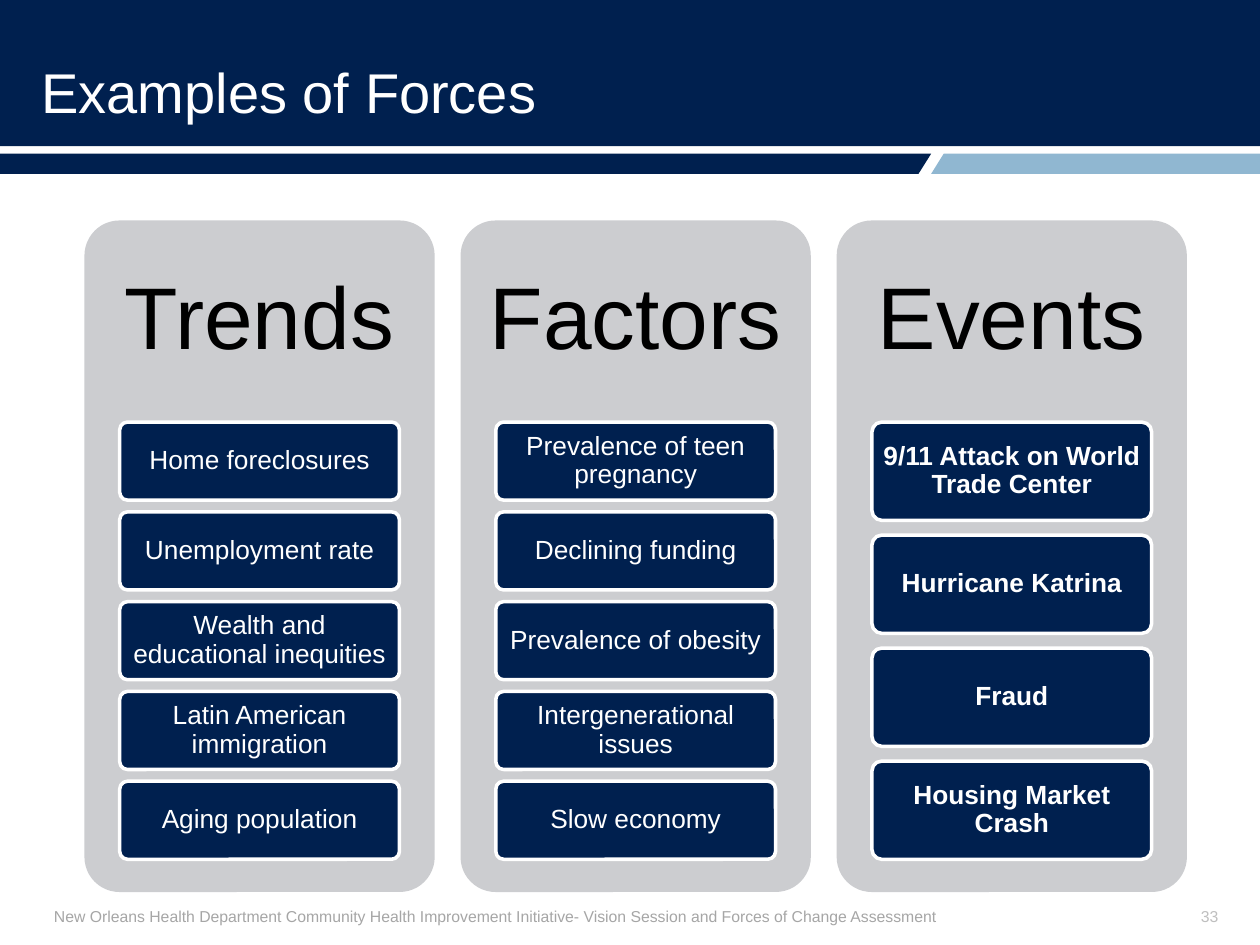
from dataclasses import dataclass

from pptx import Presentation
from pptx.dml.color import RGBColor
from pptx.enum import shapes, text
from pptx.util import Inches, Pt

COLORS = {
    "navy": "00204F",
    "sky": "90B7D1",
    "panel": "CCCDD0",
    "white": "FFFFFF",
    "black": "000000",
    "footer": "A6A6A6",
    "number": "BFBFBF",
}
PANEL_LEFT, PANEL_TOP, PANEL_WIDTH, PANEL_HEIGHT = 0.67, 1.75, 2.78, 5.33
PANEL_STEP = 2.985
HEADING_HEIGHT = 1.6
ITEM_INSET = 0.28
LIST_TOP, LIST_HEIGHT = 3.35, 3.47
GAP_RATIO = 0.15


@dataclass
class Column:
    heading: str
    items: list[str]
    bold: bool = False


@dataclass
class Style:
    size: float
    color: str
    bold: bool = False
    align: text.PP_ALIGN = text.PP_ALIGN.LEFT
    anchor: text.MSO_ANCHOR = text.MSO_ANCHOR.TOP
    margins: tuple[float, float, float, float] = (0, 0, 0, 0)
    spacing: float = 1.0


COLUMNS = [
    Column("Trends", [
        "Home foreclosures",
        "Unemployment rate",
        "Wealth and educational inequities",
        "Latin American immigration",
        "Aging population",
    ]),
    Column("Factors", [
        "Prevalence of teen pregnancy",
        "Declining funding",
        "Prevalence of obesity",
        "Intergenerational issues",
        "Slow economy",
    ]),
    Column("Events", [
        "9/11 Attack on World Trade Center",
        "Hurricane Katrina",
        "Fraud",
        "Housing Market Crash",
    ], bold=True),
]


def rgb(name: str) -> RGBColor:
    return RGBColor.from_string(COLORS[name])


def write(shape, words: str, style: Style) -> None:
    frame = shape.text_frame
    frame.text = words
    frame.word_wrap = True
    frame.vertical_anchor = style.anchor
    (frame.margin_left, frame.margin_top,
     frame.margin_right, frame.margin_bottom) = map(Inches, style.margins)
    paragraph = frame.paragraphs[0]
    paragraph.alignment = style.align
    paragraph.line_spacing = style.spacing
    font = paragraph.runs[0].font
    font.name = "Arial"
    font.size = Pt(style.size)
    font.bold = style.bold
    font.color.rgb = rgb(style.color)


def add_text(page, left: float, top: float, width: float, height: float,
             words: str, style: Style) -> None:
    box = page.shapes.add_textbox(*map(Inches, (left, top, width, height)))
    write(box, words, style)


def paint(shape, fill: str, outline: str | None = None) -> None:
    shape.shadow.inherit = False
    shape.fill.solid()
    shape.fill.fore_color.rgb = rgb(fill)
    if outline:
        shape.line.color.rgb = rgb(outline)
        shape.line.width = Pt(2)
    else:
        shape.line.fill.background()


def add_rounded(page, left: float, top: float, width: float, height: float,
                fill: str, outline: str | None = None):
    shape = page.shapes.add_shape(shapes.MSO_SHAPE.ROUNDED_RECTANGLE,
                                  *map(Inches, (left, top, width, height)))
    shape.adjustments[0] = 0.1
    paint(shape, fill, outline)
    return shape


def add_stripe(page, points: list[tuple[float, float]], fill: str) -> None:
    corners = [(Inches(x), Inches(y)) for x, y in points]
    builder = page.shapes.build_freeform(*corners[0], scale=1.0)
    builder.add_line_segments(corners[1:], close=True)
    paint(builder.convert_to_shape(), fill)


def add_header(page) -> None:
    add_stripe(page, [(0, 1.22), (7.39, 1.22), (7.29, 1.38), (0, 1.38)], "navy")
    add_stripe(page, [(7.49, 1.22), (10, 1.22), (10, 1.38), (7.39, 1.38)], "sky")
    band = page.shapes.add_shape(shapes.MSO_SHAPE.RECTANGLE, Inches(0),
                                 Inches(-0.01), Inches(10), Inches(1.17))
    paint(band, "navy")
    add_text(page, 0.33, 0.42, 9.33, 0.75, "Examples of Forces",
             Style(32, "white", margins=(0, 0.04, 0, 0)))


def add_column(page, left: float, column: Column) -> None:
    add_rounded(page, left, PANEL_TOP, PANEL_WIDTH, PANEL_HEIGHT, "panel")
    centered = {"align": text.PP_ALIGN.CENTER,
                "anchor": text.MSO_ANCHOR.MIDDLE, "spacing": 0.9}
    add_text(page, left, PANEL_TOP, PANEL_WIDTH, HEADING_HEIGHT, column.heading,
             Style(50, "black", margins=(0.21,) * 4, **centered))
    count = len(column.items)
    height = LIST_HEIGHT / (count + GAP_RATIO * (count - 1))
    item_style = Style(15, "white", column.bold,
                       margins=(0.04, 0.03, 0.04, 0.03), **centered)
    for index, item in enumerate(column.items):
        top = LIST_TOP + index * height * (1 + GAP_RATIO)
        card = add_rounded(page, left + ITEM_INSET, top,
                           PANEL_WIDTH - 2 * ITEM_INSET, height, "navy", "white")
        write(card, item, item_style)


def add_footer(page) -> None:
    add_text(page, 7.17, 7.08, 2.5, 0.27, "33",
             Style(9, "number", align=text.PP_ALIGN.RIGHT,
                   anchor=text.MSO_ANCHOR.BOTTOM))
    add_text(page, 0.33, 7.15, 8.75, 0.27,
             "New Orleans Health Department Community Health Improvement "
             "Initiative- Vision Session and Forces of Change Assessment",
             Style(9, "footer", margins=(0.1, 0.05, 0.1, 0.05)))


def main() -> None:
    """Build the slide of trends, factors and events."""
    deck = Presentation()
    deck.slide_width, deck.slide_height = Inches(10), Inches(7.5)
    page = deck.slides.add_slide(deck.slide_layouts[6])
    add_header(page)
    for index, column in enumerate(COLUMNS):
        add_column(page, PANEL_LEFT + index * PANEL_STEP, column)
    add_footer(page)
    deck.save("out.pptx")


if __name__ == "__main__":
    main()
